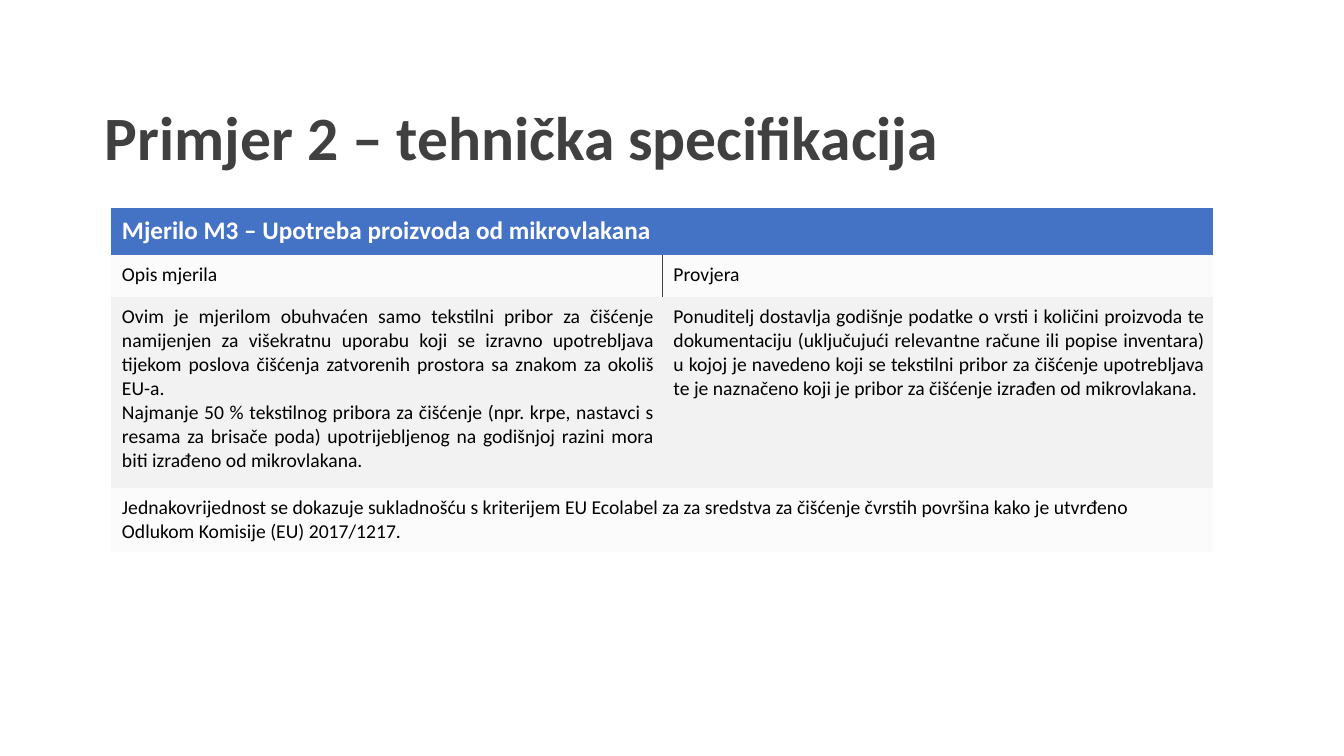
from lxml import etree
from pptx import Presentation
from pptx.dml.color import RGBColor
from pptx.enum.text import MSO_ANCHOR, PP_ALIGN
from pptx.oxml.ns import qn
from pptx.util import Inches, Pt

LEFT, JUSTIFY = PP_ALIGN.LEFT, PP_ALIGN.JUSTIFY
TOP, MIDDLE = MSO_ANCHOR.TOP, MSO_ANCHOR.MIDDLE
FONT = "Calibri"
DARK_GREY = RGBColor(0x40, 0x40, 0x40)
BLUE = RGBColor(0x44, 0x72, 0xC4)
LIGHT_GREY = RGBColor(0xF2, 0xF2, 0xF2)
BLACK = RGBColor(0, 0, 0)
WHITE = RGBColor(0xFF, 0xFF, 0xFF)


def write_text(frame, *texts, size=14, color=BLACK, bold=False, align=LEFT, spacing=1.0):
    """Write each text as one paragraph of the frame."""
    for index, text in enumerate(texts):
        paragraph = frame.add_paragraph() if index else frame.paragraphs[0]
        paragraph.alignment = align
        paragraph.line_spacing = spacing
        run = paragraph.add_run()
        run.text = text
        run.font.name = FONT
        run.font.size = Pt(size)
        run.font.bold = bold
        run.font.color.rgb = color


def set_borders(cell, lined_sides):
    """Draw a thin line on the sides named (L, R, T, B) and none on the others."""
    properties = cell._tc.get_or_add_tcPr()
    for position, side in enumerate("LRTB"):
        border = etree.Element(qn(f"a:ln{side}"), w=str(Pt(0.5)))
        if side in lined_sides:
            fill = etree.SubElement(border, qn("a:solidFill"))
            etree.SubElement(fill, qn("a:srgbClr"), val=str(DARK_GREY))
        else:
            etree.SubElement(border, qn("a:noFill"))
        properties.insert(position, border)


presentation = Presentation()
presentation.slide_width = Inches(13.33)
presentation.slide_height = Inches(7.5)
slide = presentation.slides.add_slide(presentation.slide_layouts[6])

title = slide.shapes.add_textbox(Inches(0.94), Inches(0.85), Inches(11.25), Inches(1.09))
title.text_frame.word_wrap = True
title.text_frame.vertical_anchor = MIDDLE
write_text(title.text_frame, "Primjer 2 – tehnička specifikacija",
           size=44, color=DARK_GREY, bold=True, spacing=0.9)

column_widths = [5.47, 5.46]
row_heights = [0.47, 0.42, 1.89, 0.63]
table = slide.shapes.add_table(
    len(row_heights), len(column_widths), Inches(1.1), Inches(2.06),
    Inches(sum(column_widths)), Inches(sum(row_heights))).table
table.first_row = False
table.horz_banding = False
for column, width in zip(table.columns, column_widths):
    column.width = Inches(width)
for row, height in zip(table.rows, row_heights):
    row.height = Inches(height)

row_fills = [(BLUE, 100), (LIGHT_GREY, 30), (LIGHT_GREY, 100), (LIGHT_GREY, 30)]
for row_index, (fill_color, opacity) in enumerate(row_fills):
    for column_index, inner_side in enumerate("RL"):
        cell = table.cell(row_index, column_index)
        cell.margin_left = Inches(0.11)
        cell.margin_right = cell.margin_top = cell.margin_bottom = Inches(0.08)
        cell.vertical_anchor = MIDDLE if row_index == 0 else TOP
        cell.fill.solid()
        cell.fill.fore_color.rgb = fill_color
        if opacity < 100:
            color_element = cell._tc.tcPr.find(f".//{qn('a:srgbClr')}")
            etree.SubElement(color_element, qn("a:alpha"), val=str(opacity * 1000))
        set_borders(cell, inner_side if row_index == 1 else "")

for row_index in (0, 3):
    table.cell(row_index, 0).merge(table.cell(row_index, 1))

write_text(table.cell(0, 0).text_frame, "Mjerilo M3 – Upotreba proizvoda od mikrovlakana",
           size=18, color=WHITE, bold=True)
write_text(table.cell(1, 0).text_frame, "Opis mjerila")
write_text(table.cell(1, 1).text_frame, "Provjera")
write_text(
    table.cell(2, 0).text_frame,
    "Ovim je mjerilom obuhvaćen samo tekstilni pribor za čišćenje namijenjen za višekratnu "
    "uporabu koji se izravno upotrebljava tijekom poslova čišćenja zatvorenih prostora sa "
    "znakom za okoliš EU-a.",
    "Najmanje 50 % tekstilnog pribora za čišćenje (npr. krpe, nastavci s resama za brisače "
    "poda) upotrijebljenog na godišnjoj razini mora biti izrađeno od mikrovlakana.",
    align=JUSTIFY)
write_text(
    table.cell(2, 1).text_frame,
    "Ponuditelj dostavlja godišnje podatke o vrsti i količini proizvoda te dokumentaciju "
    "(uključujući relevantne račune ili popise inventara) u kojoj je navedeno koji se "
    "tekstilni pribor za čišćenje upotrebljava te je naznačeno koji je pribor za čišćenje "
    "izrađen od mikrovlakana.",
    align=JUSTIFY)
write_text(
    table.cell(3, 0).text_frame,
    "Jednakovrijednost se dokazuje sukladnošću s kriterijem EU Ecolabel za za sredstva za "
    "čišćenje čvrstih površina kako je utvrđeno Odlukom Komisije (EU) 2017/1217.")

presentation.save("out.pptx")
